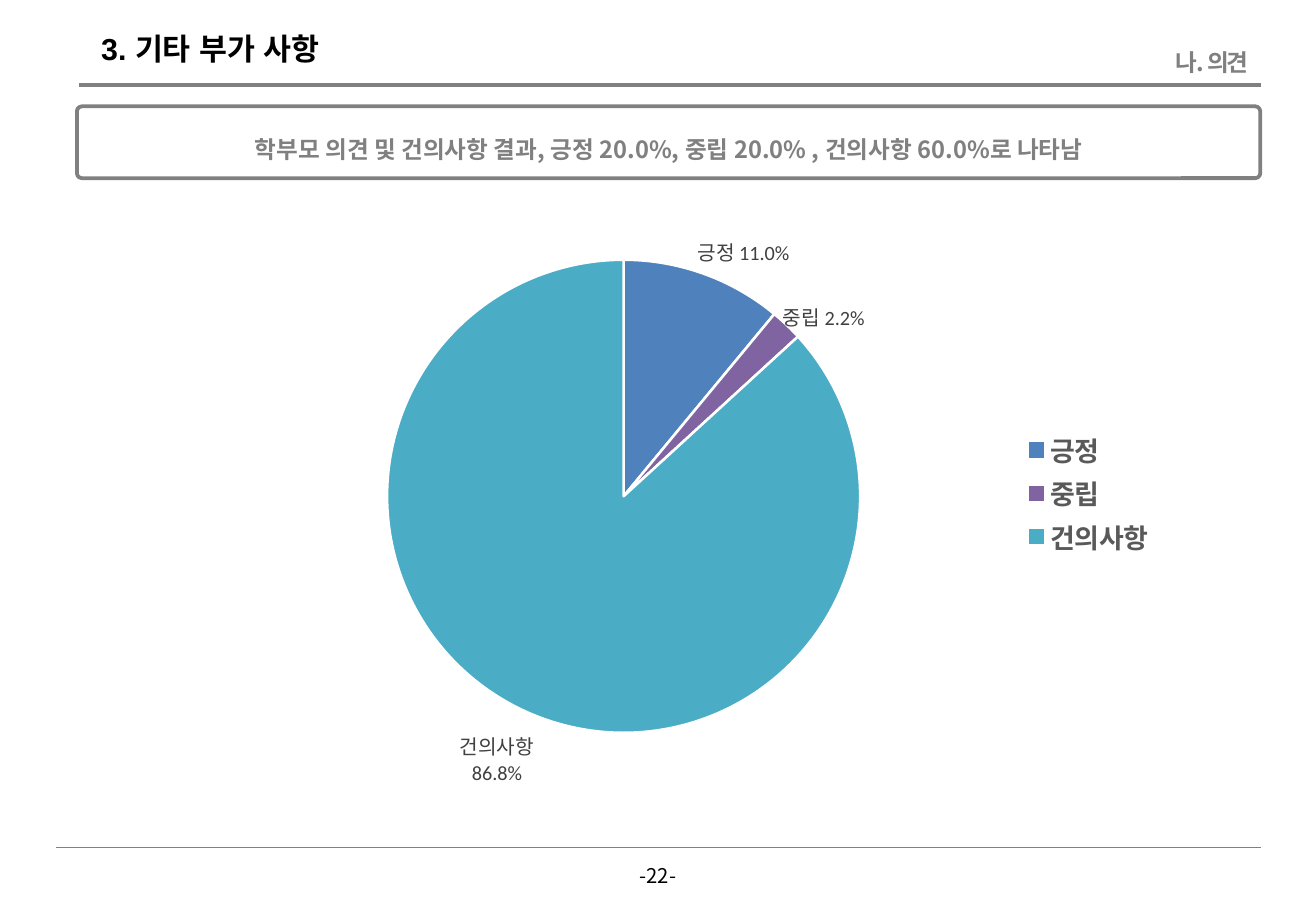
import pptx
import pptx.chart.data
import pptx.dml.color
import pptx.enum.chart
import pptx.enum.shapes
import pptx.enum.text
import pptx.oxml
import pptx.oxml.ns
import pptx.util

PX = 7620  # EMU, 120 px to the inch
COLORS = {
    "black": "000000", "white": "FFFFFF", "gray": "808080",
    "label": "404040", "legend": "595959",
}
KOREAN = "Noto Sans CJK KR"
# name, percentage, slice colour, label lines, label shift as a part of the chart
OPINIONS = [
    ("긍정", 11, "4F81BD", ["긍정 11.0%"], {"x": -0.01, "y": 0}),
    ("중립", 2.2, "8064A2", ["중립 2.2%"], {"x": -0.01, "y": 0.02}),
    ("건의사항", 86.8, "4BACC6", ["건의사항", "86.8%"], {"x": 0.01, "y": 0.02}),
]
PIE_LAYOUT = {"x": 0.11, "y": 0.1, "w": 0.54, "h": 0.81}
ALIGN = pptx.enum.text.PP_ALIGN


def px(*lengths):
    return [length * PX for length in lengths]


def rgb(name):
    return pptx.dml.color.RGBColor.from_string(COLORS.get(name, name))


def style_font(font, size, color, bold=False, name="Calibri"):
    font.size = pptx.util.Pt(size)
    font.bold = bold
    font.color.rgb = rgb(color)
    font.name = name


def write(frame, text, size, color, bold=False, name=KOREAN, align=ALIGN.LEFT,
          spacing=None, wrap=True):
    """Fill a text frame with one run; spacing is between letters, in points."""
    frame.word_wrap = wrap
    frame.vertical_anchor = pptx.enum.text.MSO_ANCHOR.MIDDLE
    paragraph = frame.paragraphs[0]
    paragraph.alignment = align
    run = paragraph.add_run()
    run.text = text
    style_font(run.font, size, color, bold, name)
    properties = run._r.get_or_add_rPr()
    east_asian = pptx.oxml.ns.qn("a:ea")
    properties.append(properties.makeelement(east_asian, {"typeface": name}))
    if spacing is not None:
        properties.set("spc", str(int(spacing * 100)))
    return paragraph


def add_rule(slide, left, right, y, width):
    rule = slide.shapes.add_connector(
        pptx.enum.shapes.MSO_CONNECTOR.STRAIGHT, *px(left, y, right, y))
    rule.line.color.rgb = rgb("gray")
    rule.line.width = pptx.util.Pt(width)
    properties = rule._element.spPr
    properties.append(properties.makeelement(pptx.oxml.ns.qn("a:effectLst"), {}))


def add_title(slide, text):
    title = slide.shapes.title
    title.left, title.top, title.width, title.height = px(88, 24, 264, 48)
    write(title.text_frame, text, 18, "black", True, "Arial")


def add_label(slide, box, text, size, color, **options):
    label = slide.shapes.add_textbox(*px(*box))
    write(label.text_frame, text, size, color, **options)


def add_summary(slide, text):
    summary = slide.shapes.add_shape(
        pptx.enum.shapes.MSO_SHAPE.ROUNDED_RECTANGLE, *px(76, 105, 1169, 71))
    summary.adjustments[0] = 0.07
    summary.shadow.inherit = False
    summary.fill.background()
    summary.line.color.rgb = rgb("gray")
    summary.line.width = pptx.util.Pt(2.25)
    paragraph = write(summary.text_frame, text, 14, "gray", True,
                      align=ALIGN.CENTER)
    paragraph.line_spacing = 1.45


def manual_layout(fractions, settings=""):
    sizes = "".join(f'<c:{key} val="{value}"/>' for key, value in fractions.items())
    return pptx.oxml.parse_xml(
        f'<c:layout {pptx.oxml.ns.nsdecls("c")}><c:manualLayout>'
        f'{settings}{sizes}</c:manualLayout></c:layout>')


def place_pie(chart):
    """Fix the inner plot area as fractions of the chart."""
    plot_area = chart._chartSpace.chart.plotArea
    for layout in plot_area.findall(pptx.oxml.ns.qn("c:layout")):
        plot_area.remove(layout)
    plot_area.insert(0, manual_layout(
        PIE_LAYOUT, '<c:layoutTarget val="inner"/>'
                    '<c:xMode val="edge"/><c:yMode val="edge"/>'))


def style_slice(point, color, label_lines):
    point.format.fill.solid()
    point.format.fill.fore_color.rgb = rgb(color)
    point.format.line.color.rgb = rgb("white")
    point.format.line.width = pptx.util.Pt(1.5)
    frame = point.data_label.text_frame
    for index, line in enumerate(label_lines):
        paragraph = frame.add_paragraph() if index else frame.paragraphs[0]
        run = paragraph.add_run()
        run.text = line
        style_font(run.font, 12, "label")
    point.data_label.position = pptx.enum.chart.XL_LABEL_POSITION.OUTSIDE_END


def shift_labels(series):
    """Move each label off its outside-end place, without leader lines."""
    labels = series._element.find(pptx.oxml.ns.qn("c:dLbls"))
    for label, (*_, shift) in zip(labels.findall(pptx.oxml.ns.qn("c:dLbl")), OPINIONS):
        label.insert(1, manual_layout(shift))
    for leader in labels.findall(pptx.oxml.ns.qn("c:showLeaderLines")):
        leader.set("val", "0")


def add_opinion_pie(slide):
    data = pptx.chart.data.CategoryChartData(number_format="0.0")
    data.categories = [name for name, *_ in OPINIONS]
    data.add_series("Series 1", [value for _, value, *_ in OPINIONS])
    chart = slide.shapes.add_chart(
        pptx.enum.chart.XL_CHART_TYPE.PIE, *px(287, 199, 866, 577), data).chart
    style_font(chart.font, 10, "black")
    chart.has_title = False
    chart.has_legend = True
    chart.legend.position = pptx.enum.chart.XL_LEGEND_POSITION.RIGHT
    chart.legend.include_in_layout = False
    style_font(chart.legend.font, 16, "legend", True)
    pie = chart.plots[0]
    pie.vary_by_categories = True
    series = pie.series[0]
    labels = series.data_labels
    labels.show_percentage = True
    labels.show_value = False
    labels.number_format = "0.0%"
    labels.number_format_is_linked = False
    for index, (_, _, color, label_lines, _) in enumerate(OPINIONS):
        style_slice(series.points[index], color, label_lines)
    shift_labels(series)
    place_pie(chart)


def main():
    deck = pptx.Presentation()
    deck.slide_width, deck.slide_height = px(1300, 900)
    slide = deck.slides.add_slide(deck.slide_layouts.get_by_name("Title Only"))
    add_rule(slide, 78, 1246, 84, 2.5)
    add_rule(slide, 55, 1246, 837, 0.5)
    add_title(slide, "3. 기타 부가 사항")
    add_label(slide, (1004, 41, 241, 41), "나. 의견", 14, "gray",
              bold=True, align=ALIGN.RIGHT, spacing=-1.5)
    add_label(slide, (617, 847, 66, 36), "-22-", 12, "black",
              align=ALIGN.CENTER, wrap=False)
    add_summary(slide, "학부모 의견 및 건의사항 결과, 긍정 20.0%, 중립 20.0% , "
                       "건의사항 60.0%로 나타남")
    add_opinion_pie(slide)
    deck.save("out.pptx")


if __name__ == "__main__":
    main()
